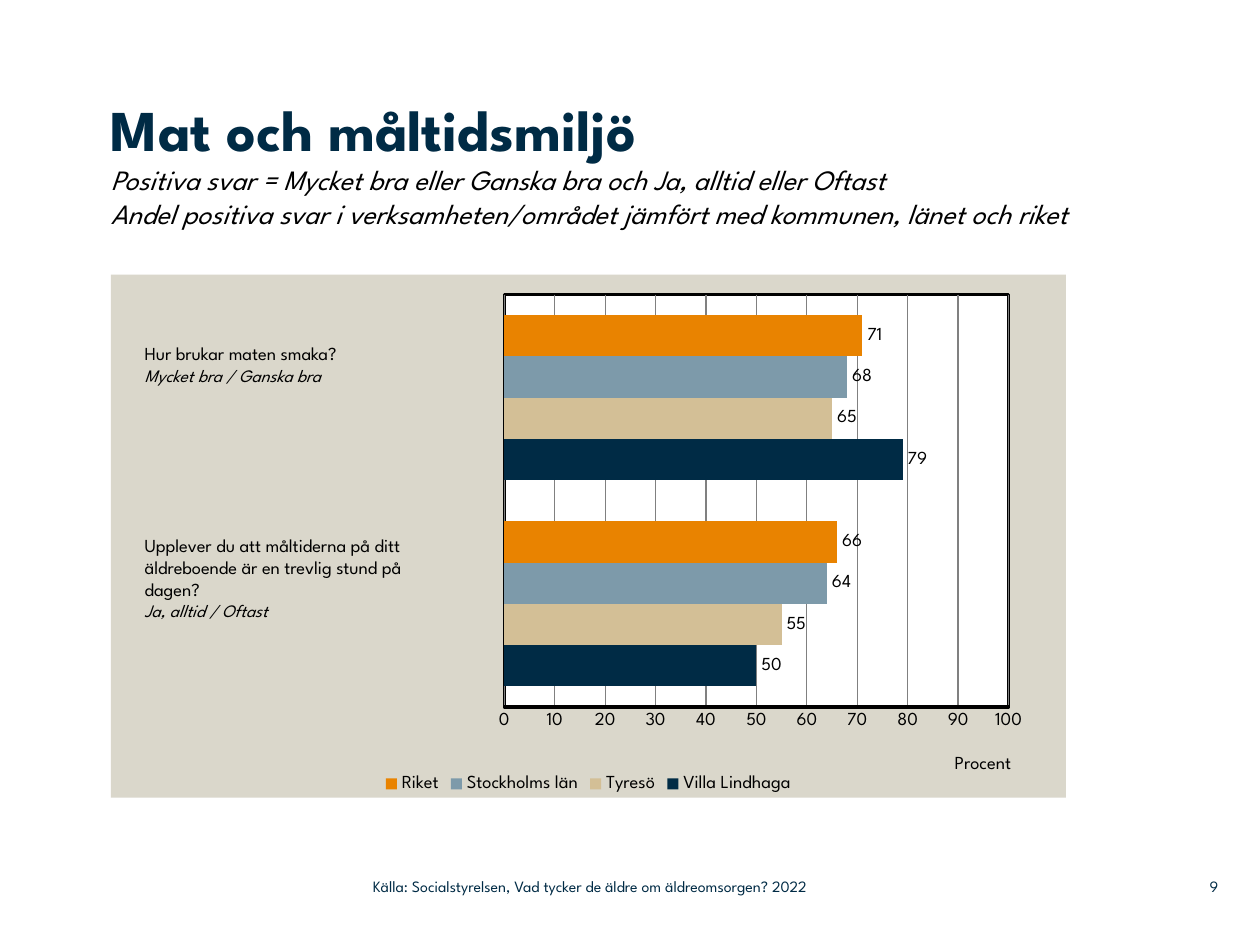
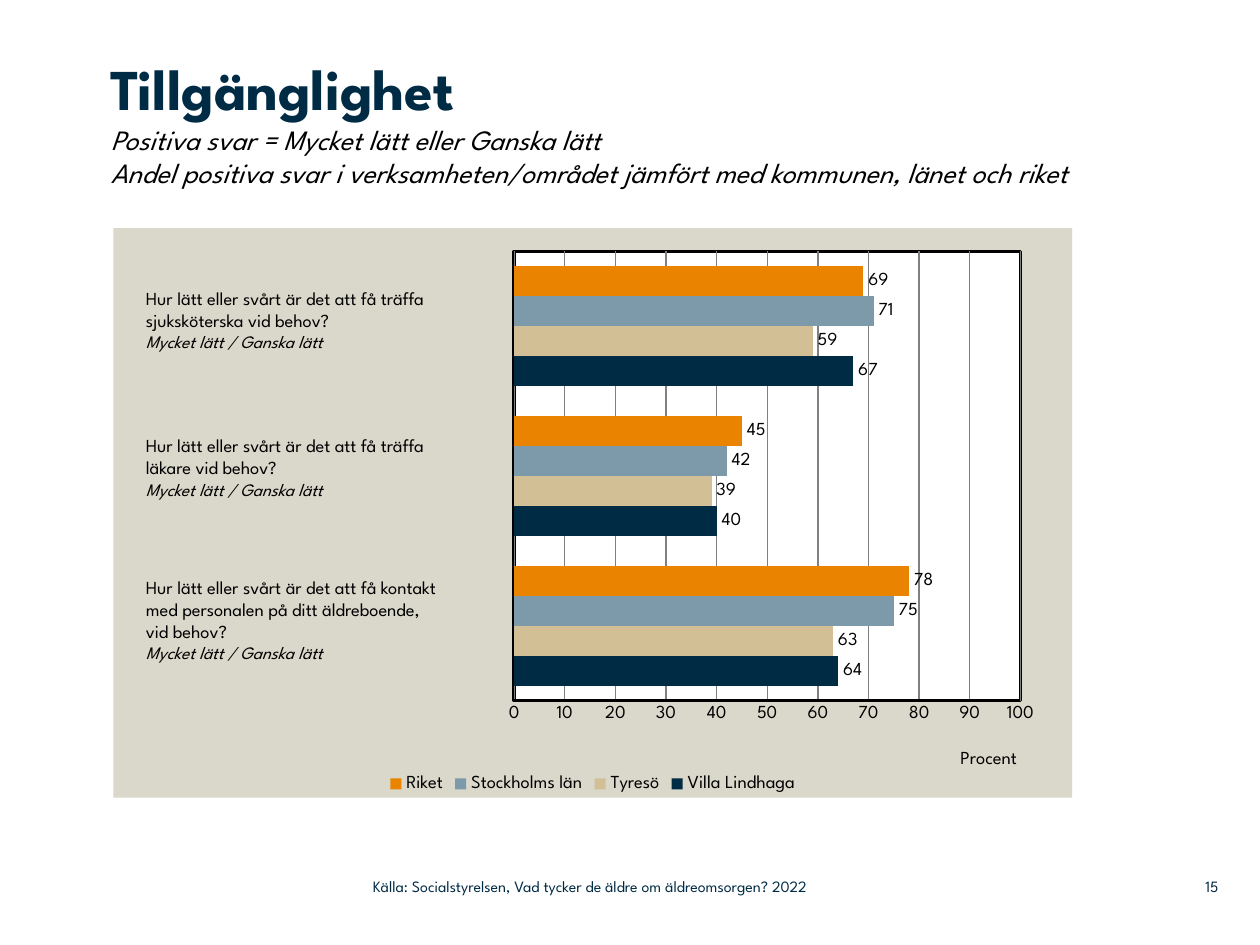
import copy
from dataclasses import dataclass

import lxml.etree
import pptx
import pptx.chart.data
import pptx.dml.color
import pptx.enum.chart
import pptx.enum.text
import pptx.oxml
import pptx.oxml.ns
import pptx.util

COLUMNS, ROWS = 100, 75
TITLE_ONLY = 5
SOURCE = "Källa: Socialstyrelsen, Vad tycker de äldre om äldreomsorgen? 2022"
COMPARISON = "Andel positiva svar i verksamheten/området jämfört med kommunen, länet och riket"
VERY_EASY = "Mycket lätt / Ganska lätt"
qn = pptx.oxml.ns.qn


@dataclass(frozen=True)
class Theme:
    font: str = "League Spartan"
    navy: str = "002B45"
    black: str = "000000"
    white: str = "FFFFFF"
    panel: str = "DAD7CB"
    gridline: str = "808080"
    series: tuple = (("Villa Lindhaga", "002B45"), ("Tyresö", "D3BF96"),
                     ("Stockholms län", "7D9AAA"), ("Riket", "E98300"))
    title: float = 33
    subtitle: float = 16
    body: float = 10.5
    answer: float = 10
    footer: float = 9
    frame: float = 2


def rgb(value):
    return pptx.dml.color.RGBColor.from_string(value)


def set_layout(parent, **shares):
    """Place a chart part by shares of the chart; width and height mean the inner plot."""
    layout = parent.find(qn("c:layout"))
    if layout is None:
        layout = lxml.etree.Element(qn("c:layout"))
        parent.insert(0, layout)
    for child in list(layout):
        layout.remove(child)
    manual = lxml.etree.SubElement(layout, qn("c:manualLayout"))
    values = {"layoutTarget": "inner"} if "w" in shares else {}
    values.update(xMode="edge", yMode="edge", **shares)
    for tag, value in values.items():
        lxml.etree.SubElement(manual, qn(f"c:{tag}")).set("val", str(value))


def area_style(fill, line=None, width=0):
    """Shape properties for the chart areas."""
    stroke = f'<a:solidFill><a:srgbClr val="{line}"/></a:solidFill>' if line else "<a:noFill/>"
    return pptx.oxml.parse_xml(
        f'<c:spPr {pptx.oxml.ns.nsdecls("c", "a")}>'
        f'<a:solidFill><a:srgbClr val="{fill}"/></a:solidFill>'
        f'<a:ln w="{pptx.util.Pt(width)}">{stroke}</a:ln></c:spPr>')


class Deck:
    def __init__(self, theme):
        self.theme = theme
        self.prs = pptx.Presentation()
        self.prs.slide_width = pptx.util.Inches(10)
        self.prs.slide_height = pptx.util.Inches(7.5)
        self.s = None

    def at(self, col, row, cols, rows):
        dx, dy = self.prs.slide_width / COLUMNS, self.prs.slide_height / ROWS
        return [round(v) for v in (col * dx, row * dy, cols * dx, rows * dy)]

    def style(self, font, size, color=None, bold=False, italic=False):
        font.name = self.theme.font
        font.size = pptx.util.Pt(size)
        font.bold, font.italic = bold, italic
        font.color.rgb = rgb(color or self.theme.black)

    def run(self, p, text, size, **look):
        r = p.add_run()
        r.text = text
        self.style(r.font, size, **look)
        return r

    def frame(self, sp, inset=True, middle=False):
        tf = sp.text_frame
        tf.word_wrap = True
        tf.auto_size = pptx.enum.text.MSO_AUTO_SIZE.NONE
        anchors = pptx.enum.text.MSO_ANCHOR
        tf.vertical_anchor = anchors.MIDDLE if middle else anchors.TOP
        if not inset:
            tf.margin_left = tf.margin_top = tf.margin_right = tf.margin_bottom = 0
        return tf

    def slide(self, number):
        self.s = self.prs.slides.add_slide(self.prs.slide_layouts[TITLE_ONLY])
        self.footer(SOURCE, (29.6, 68.9, 44.3, 2.9))
        self.footer(str(number), (92, 68.9, 4.7, 2.9), right=True)

    def footer(self, text, box, right=False):
        tf = self.frame(self.s.shapes.add_textbox(*self.at(*box)), inset=False, middle=True)
        p = tf.paragraphs[0]
        if right:
            p.alignment = pptx.enum.text.PP_ALIGN.RIGHT
        self.run(p, text, self.theme.footer, color=self.theme.navy)

    def title(self, heading, positive, box):
        sp = self.s.shapes.title
        sp.left, sp.top, sp.width, sp.height = self.at(*box)
        p = self.frame(sp, inset=False).paragraphs[0]
        p.alignment = pptx.enum.text.PP_ALIGN.LEFT
        r = self.run(p, heading, self.theme.title, color=self.theme.navy, bold=True)
        for line in (positive, COMPARISON):
            p.add_line_break()
            p._p[-1].append(copy.deepcopy(r._r.rPr))
            r = self.run(p, line, self.theme.subtitle, italic=True)

    def question(self, lines, answer, box):
        tf = self.frame(self.s.shapes.add_textbox(*self.at(*box)))
        for i, line in enumerate(lines):
            p = tf.add_paragraph() if i else tf.paragraphs[0]
            self.run(p, line, self.theme.body)
        self.run(tf.add_paragraph(), answer, self.theme.answer, italic=True)

    def bar_chart(self, rows, box, plot_area):
        """Draw one row of values per question, from the bottom up, in series order."""
        theme = self.theme
        data = pptx.chart.data.CategoryChartData()
        data.categories = [str(i + 1) for i in range(len(rows))]
        for (name, _), values in zip(theme.series, zip(*rows)):
            data.add_series(name, values)
        chart = self.s.shapes.add_chart(
            pptx.enum.chart.XL_CHART_TYPE.BAR_CLUSTERED, *self.at(*box), data).chart
        self.style(chart.font, theme.body)
        chart.has_title = False
        chart.has_legend = True
        chart.legend.position = pptx.enum.chart.XL_LEGEND_POSITION.BOTTOM
        chart.legend.include_in_layout = False
        self.style(chart.legend.font, theme.body)

        plot = chart.plots[0]
        plot.gap_width, plot.overlap = 100, 0
        plot.vary_by_categories = False
        plot.has_data_labels = True
        labels = plot.data_labels
        labels.show_value = True
        labels.position = pptx.enum.chart.XL_LABEL_POSITION.OUTSIDE_END
        self.style(labels.font, theme.body)
        for series, (_, color) in zip(plot.series, theme.series):
            series.format.fill.solid()
            series.format.fill.fore_color.rgb = rgb(color)
            series.invert_if_negative = False

        chart.category_axis.visible = False
        self.percent_axis(chart.value_axis)

        area = chart._chartSpace.chart.plotArea
        set_layout(area, **dict(zip("xywh", plot_area)))
        area.append(area_style(theme.white, theme.black, theme.frame))
        chart._chartSpace.chart.addnext(area_style(theme.panel))

    def percent_axis(self, axis):
        axis.minimum_scale, axis.maximum_scale, axis.major_unit = 0, 100, 10
        axis.major_tick_mark = pptx.enum.chart.XL_TICK_MARK.NONE
        axis.has_major_gridlines = True
        grid = axis.major_gridlines.format.line
        grid.color.rgb = rgb(self.theme.gridline)
        grid.width = pptx.util.Pt(0.75)
        axis.format.line.color.rgb = rgb(self.theme.black)
        axis.format.line.width = pptx.util.Pt(self.theme.frame)
        self.style(axis.tick_labels.font, self.theme.body)
        p = axis.axis_title.text_frame.paragraphs[0]
        self.run(p, "Procent", self.theme.body)
        set_layout(axis.axis_title._element, x=0.88, y=0.91)


def food_slide(deck):
    deck.slide(9)
    deck.title("Mat och måltidsmiljö",
               "Positiva svar = Mycket bra eller Ganska bra och Ja, alltid eller Oftast",
               (8.8, 7.4, 84.2, 14.4))
    deck.bar_chart([(50, 55, 64, 66), (79, 65, 68, 71)],
                   (8.8, 21.8, 75.8, 41.5), (0.412, 0.038, 0.528, 0.789))
    deck.question(["Hur brukar maten smaka?"], "Mycket bra / Ganska bra",
                  (10.5, 26.7, 27.7, 6.3))
    deck.question(["Upplever du att måltiderna på ditt äldreboende är en trevlig stund på",
                   "dagen?"], "Ja, alltid / Oftast", (10.5, 41.9, 27.7, 9.8))


def access_slide(deck):
    deck.slide(15)
    deck.title("Tillgänglighet", "Positiva svar = Mycket lätt eller Ganska lätt",
               (8.8, 4.2, 77.7, 13.9))
    deck.bar_chart([(64, 63, 75, 78), (40, 39, 42, 45), (67, 59, 71, 69)],
                   (9, 18.1, 76.1, 45.2), (0.418, 0.041, 0.528, 0.789))
    questions = [
        (["Hur lätt eller svårt är det att få träffa sjuksköterska vid behov?"],
         22.3, 29.9, 8.1),
        (["Hur lätt eller svårt är det att få träffa", "läkare vid behov?"],
         34, 29.3, 8.1),
        (["Hur lätt eller svårt är det att få kontakt",
          "med personalen på ditt äldreboende,", "vid behov?"], 45.2, 30.1, 9.8),
    ]
    for lines, row, cols, rows in questions:
        deck.question(lines, VERY_EASY, (10.6, row, cols, rows))


def main():
    deck = Deck(Theme())
    food_slide(deck)
    access_slide(deck)
    deck.prs.save("out.pptx")


if __name__ == "__main__":
    main()
